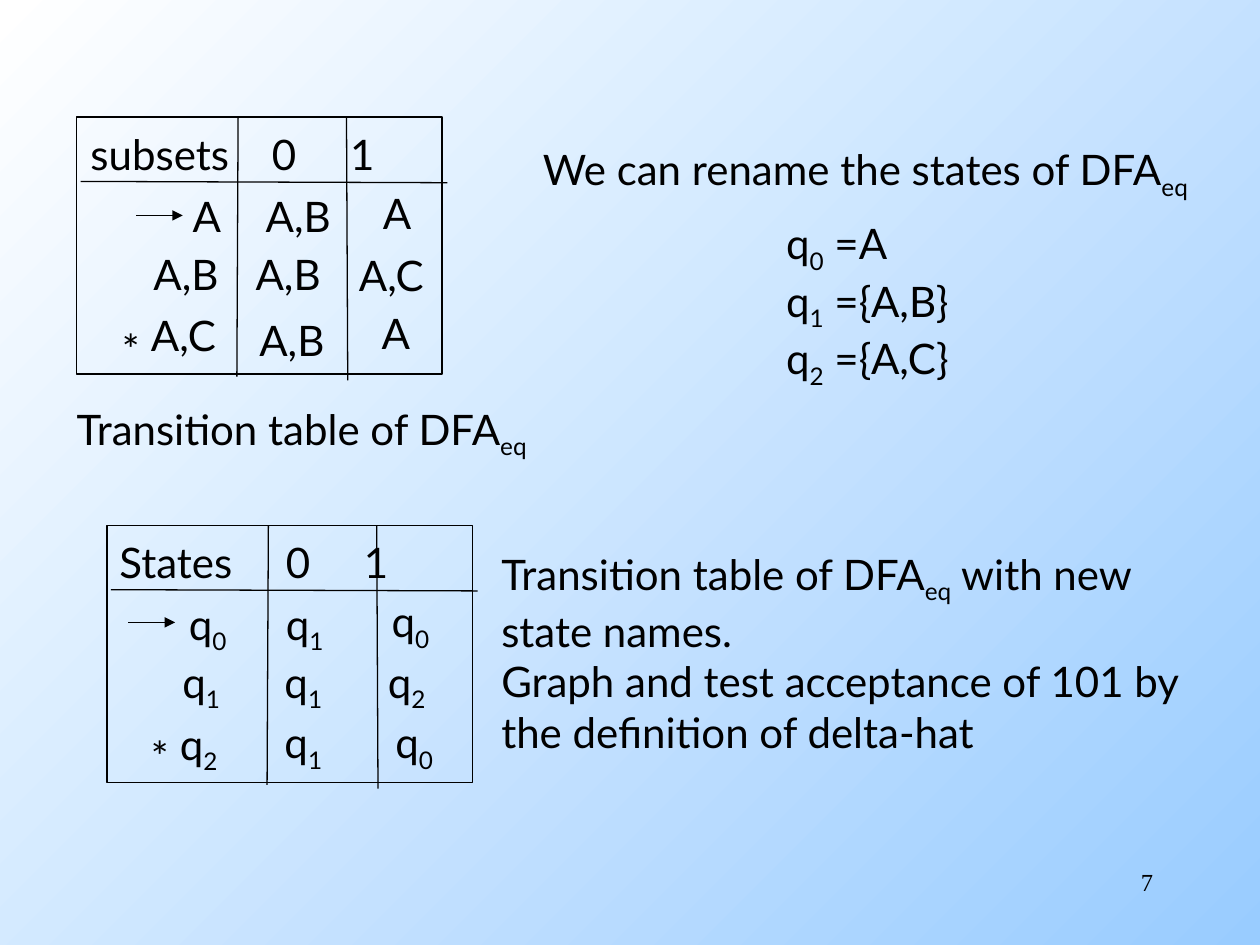
from dataclasses import dataclass

import pptx
import pptx.dml.color
import pptx.enum.dml
import pptx.enum.shapes
import pptx.enum.text
import pptx.util
from lxml import etree
from pptx.oxml.ns import qn

Inches = pptx.util.Inches
Pt = pptx.util.Pt
RGBColor = pptx.dml.color.RGBColor
Align = pptx.enum.text.PP_ALIGN


@dataclass(frozen=True)
class Theme:
    ink: RGBColor = RGBColor(0x00, 0x00, 0x00)
    sky_start: RGBColor = RGBColor(0xFF, 0xFF, 0xFF)
    sky_end: RGBColor = RGBColor(0x99, 0xCC, 0xFF)
    font: str = "Lato"
    number_font: str = "Times New Roman"
    body_size: float = 24
    number_size: float = 14
    rule_width: float = 0.75


@dataclass(frozen=True)
class Label:
    text: str
    left: float
    top: float
    width: float = 0.77
    height: float = 0.52


@dataclass(frozen=True)
class Rule:
    x1: float
    y1: float
    x2: float
    y2: float
    arrow: bool = False


@dataclass(frozen=True)
class TransitionTable:
    left: float
    top: float
    header: Label
    header_stops: tuple[float, float]
    start_arrow: Rule
    entries: tuple[Label, ...]


THEME = Theme()
FRAME_WIDTH, FRAME_HEIGHT = 2.9, 2.04
GRID = (
    Rule(1.28, 0, 1.27, 2.06),
    Rule(2.14, 0, 2.15, 2.09),
    Rule(0.03, 0.51, 2.94, 0.52),
)

TABLES = (
    TransitionTable(
        0.61, 0.93,
        Label("subsets\t0\t1", 0.62, 0.97, 2.76), (1.44, 2.06),
        Rule(1.08, 1.71, 1.45, 1.71, True),
        (
            Label("A", 1.43, 1.46, 0.4), Label("A,B", 2.01, 1.46, 0.75),
            Label("A", 2.94, 1.44, 0.4),
            Label("A,B", 1.12, 1.92), Label("A,B", 1.93, 1.92),
            Label("A,C", 2.75, 1.93),
            Label("*", 0.87, 2.52, 0.43), Label("A,C", 1.1, 2.41),
            Label("A,B", 1.96, 2.45), Label("A", 2.93, 2.39, 0.4),
        ),
    ),
    TransitionTable(
        0.85, 4.17,
        Label("States\t0\t1", 0.85, 4.21, 2.76), (1.32, 1.94),
        Rule(1.02, 4.94, 1.39, 4.94, True),
        (
            Label("q|0", 1.4, 4.7, 0.51), Label("q|1", 2.17, 4.7, 0.75),
            Label("q|0", 3.01, 4.68, 0.51),
            Label("q|1", 1.35, 5.16), Label("q|1", 2.16, 5.16),
            Label("q|2", 2.98, 5.16),
            Label("*", 1.1, 5.75, 0.43), Label("q|2", 1.33, 5.65),
            Label("q|1", 2.16, 5.64), Label("q|0", 3.04, 5.64, 0.51),
        ),
    ),
)

RENAMING = Label("We can rename the states of DFA|eq", 4.21, 1.09, 5.54, 0.6)
PAGE_NUMBER = Label("7", 7.17, 6.83, 2.08, 0.5)
NOTES_BESIDE_TABLES = (
    Label("Transition table of DFA|eq", 0.51, 3.15, 3.9, 0.51),
    Label(
        "Transition table of DFA|eq| with new state names.\n"
        "Graph and test acceptance of 101 by\nthe definition of delta-hat",
        3.88, 4.3, 5.88, 1.72,
    ),
    Label("q|0| =A\nq|1| ={A,B}\nq|2| ={A,C}", 6.14, 1.68, 1.69, 1.72),
)


def add_label(
    shapes,
    label: Label,
    font: str = THEME.font,
    size: float = THEME.body_size,
    align: Align = Align.LEFT,
    space_before: float = 0,
    tab_stops: tuple[float, ...] = (),
) -> None:
    box = shapes.add_textbox(
        Inches(label.left), Inches(label.top), Inches(label.width), Inches(label.height)
    )
    frame = box.text_frame
    frame.word_wrap = True
    for index, line in enumerate(label.text.split("\n")):
        paragraph = frame.add_paragraph() if index else frame.paragraphs[0]
        paragraph.alignment = align
        paragraph.space_before = Pt(space_before)
        if tab_stops:
            stops = etree.SubElement(paragraph._p.get_or_add_pPr(), qn("a:tabLst"))
            for position in tab_stops:
                etree.SubElement(
                    stops, qn("a:tab"), pos=str(Inches(position)), algn="l"
                )
        for part, text in enumerate(line.split("|")):
            run = paragraph.add_run()
            run.text = text
            run.font.name = font
            run.font.size = Pt(size)
            run.font.color.rgb = THEME.ink
            if part % 2:
                run._r.get_or_add_rPr().set("baseline", "-25000")


def add_rule(shapes, rule: Rule, left: float = 0, top: float = 0) -> None:
    connector = shapes.add_connector(
        pptx.enum.shapes.MSO_CONNECTOR.STRAIGHT,
        Inches(left + rule.x1), Inches(top + rule.y1),
        Inches(left + rule.x2), Inches(top + rule.y2),
    )
    connector.line.color.rgb = THEME.ink
    connector.line.width = Pt(THEME.rule_width)
    if rule.arrow:
        etree.SubElement(connector.line._get_or_add_ln(), qn("a:tailEnd"), type="triangle")
    etree.SubElement(connector._element.spPr, qn("a:effectLst"))


def add_transition_table(slide, table: TransitionTable) -> None:
    shapes = slide.shapes.add_group_shape().shapes
    border = shapes.add_shape(
        pptx.enum.shapes.MSO_SHAPE.RECTANGLE,
        Inches(table.left), Inches(table.top),
        Inches(FRAME_WIDTH), Inches(FRAME_HEIGHT),
    )
    border.shadow.inherit = False
    border.fill.background()
    border.line.color.rgb = THEME.ink
    border.line.width = Pt(THEME.rule_width)
    for rule in GRID:
        add_rule(shapes, rule, table.left, table.top)
    add_rule(shapes, table.start_arrow)
    add_label(shapes, table.header, tab_stops=table.header_stops)
    for entry in table.entries:
        add_label(shapes, entry)


def paint_background(slide) -> None:
    fill = slide.background.fill
    fill.gradient()
    fill.gradient_angle = 315
    for stop, color in zip(fill.gradient_stops, (THEME.sky_start, THEME.sky_end)):
        stop.color.rgb = color


def main() -> None:
    deck = pptx.Presentation()
    deck.slide_width, deck.slide_height = Inches(10), Inches(7.5)
    slide = deck.slides.add_slide(deck.slide_layouts[6])
    paint_background(slide)
    add_label(slide.shapes, RENAMING, space_before=4.8)
    add_label(
        slide.shapes, PAGE_NUMBER, THEME.number_font, THEME.number_size, Align.RIGHT
    )
    for note in NOTES_BESIDE_TABLES:
        add_label(slide.shapes, note)
    for table in TABLES:
        add_transition_table(slide, table)
    deck.save("out.pptx")


if __name__ == "__main__":
    main()
